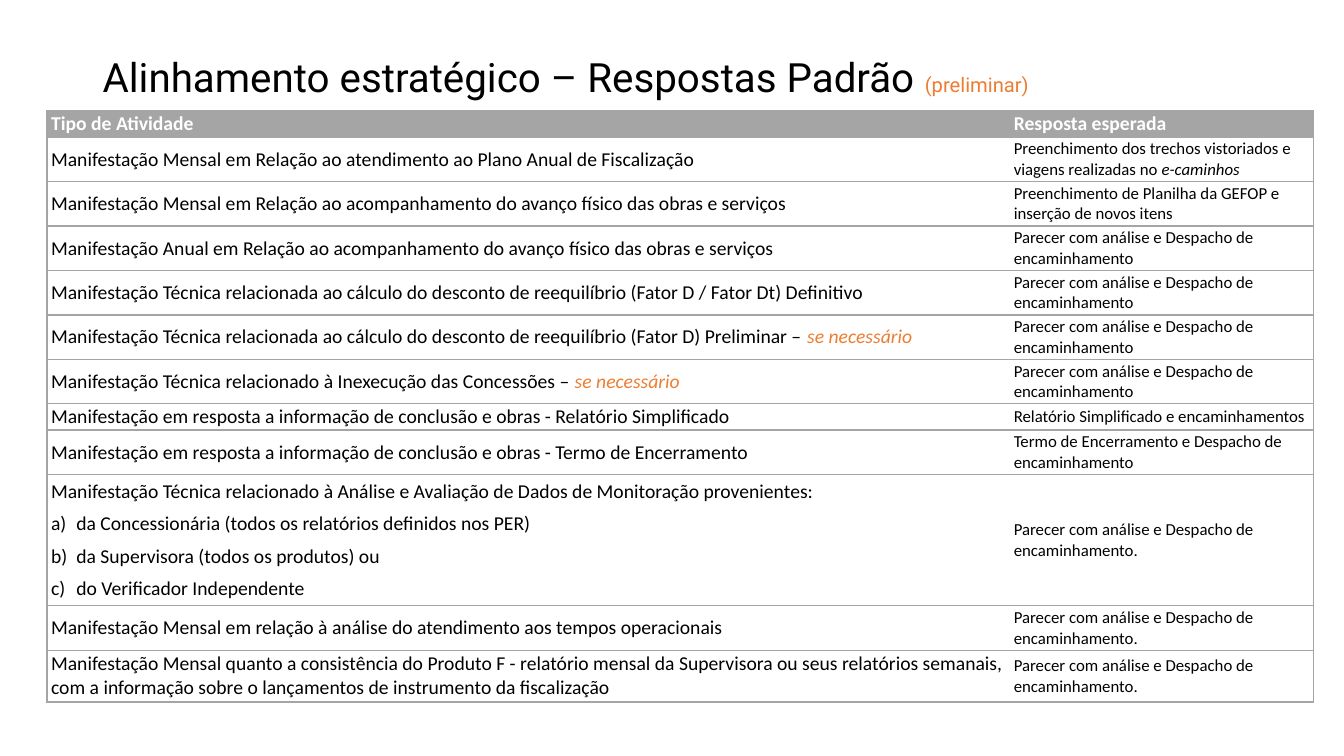
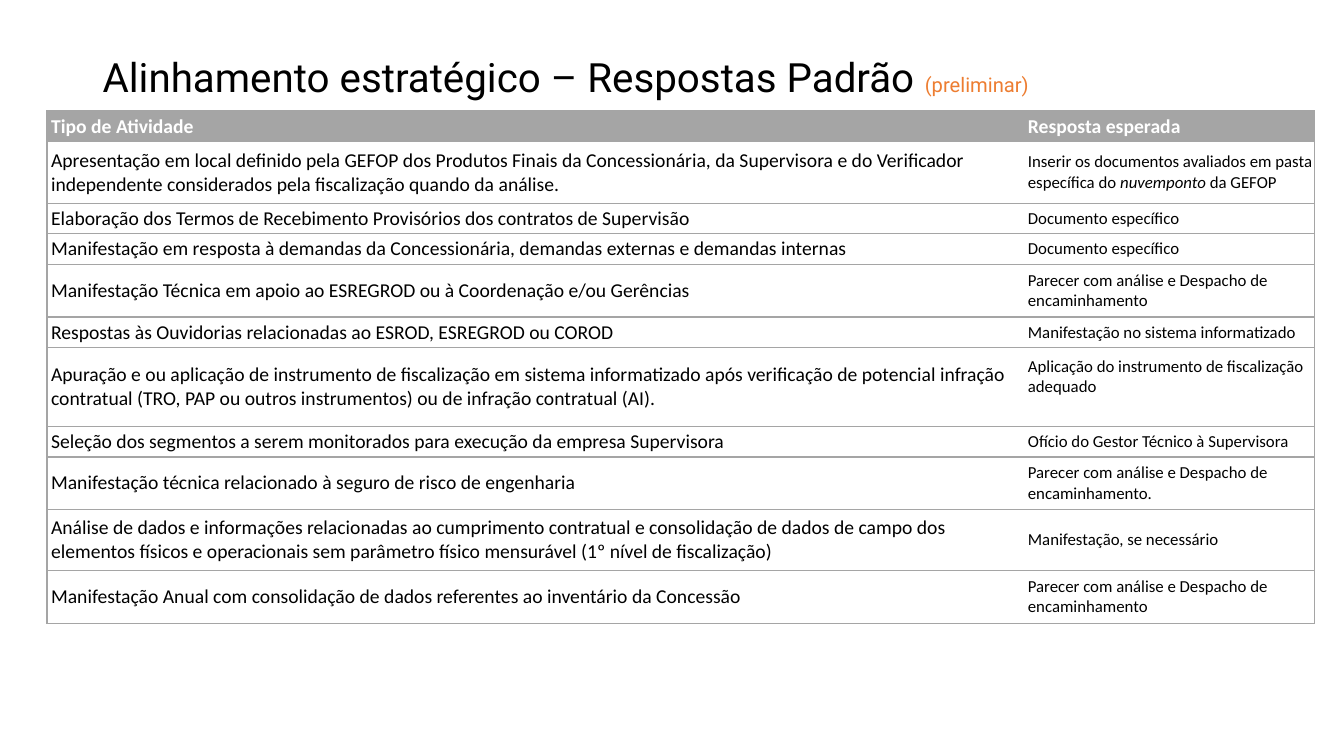
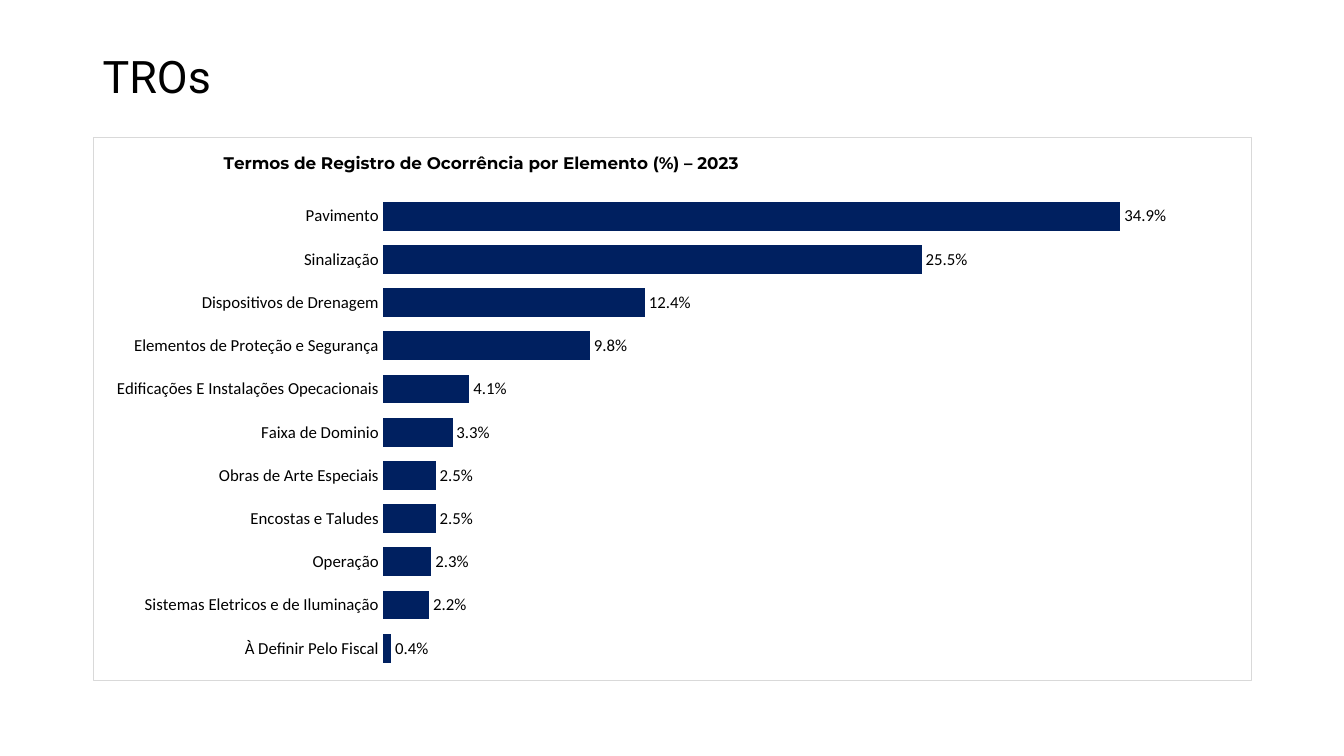
"""Build three slides: two tables of standard responses and one chart of occurrence records."""
from lxml.etree import SubElement
from pptx import Presentation
from pptx.chart.data import CategoryChartData
from pptx.dml.color import RGBColor
from pptx.enum.chart import XL_CHART_TYPE as ChartType
from pptx.enum.chart import XL_LABEL_POSITION as LabelPosition
from pptx.enum.chart import XL_TICK_MARK as TickMark
from pptx.enum.text import MSO_ANCHOR as Anchor
from pptx.oxml import parse_xml
from pptx.oxml.ns import nsdecls, qn
from pptx.util import Inches, Pt

COLORS = {
    name: RGBColor.from_string(value)
    for name, value in {
        "black": "000000",
        "white": "FFFFFF",
        "gray": "A5A5A5",
        "orange": "ED7D31",
        "navy": "002060",
        "frame": "D9D9D9",
    }.items()
}
TITLE_FONT, BODY_FONT = "Roboto", "Calibri"
NO_STYLE = "{2D5ABB26-0587-4C30-8999-92F81FD0307C}"
OPINION = "Parecer com análise e Despacho de encaminhamento"
HEADING = ("Tipo de Atividade", "Resposta esperada")

TABLES = [
    {
        "columns": (71.63, 22.58),
        "spacing": 6,
        "rows": [
            (3.47, *HEADING),
            (5.88, "Manifestação Mensal em Relação ao atendimento ao Plano Anual de Fiscalização",
             "Preenchimento dos trechos vistoriados e viagens realizadas no *e-caminhos*"),
            (5.88, "Manifestação Mensal em Relação ao acompanhamento do avanço físico das obras e serviços",
             "Preenchimento de Planilha da GEFOP e inserção de novos itens"),
            (5.88, "Manifestação Anual em Relação ao acompanhamento do avanço físico das obras e serviços",
             OPINION),
            (5.88, "Manifestação Técnica relacionada ao cálculo do desconto de reequilíbrio "
             "(Fator D / Fator Dt) Definitivo", OPINION),
            (5.88, "Manifestação Técnica relacionada ao cálculo do desconto de reequilíbrio "
             "(Fator D) Preliminar – *se necessário*", OPINION),
            (5.88, "Manifestação Técnica relacionado à Inexecução das Concessões – *se necessário*", OPINION),
            (3.47, "Manifestação em resposta a informação de conclusão e obras - Relatório Simplificado",
             "Relatório Simplificado e encaminhamentos"),
            (5.88, "Manifestação em resposta a informação de conclusão e obras - Termo de Encerramento",
             "Termo de Encerramento e Despacho de encaminhamento"),
            (17.38, "Manifestação Técnica relacionado à Análise e Avaliação de Dados de Monitoração provenientes:\n"
             "da Concessionária (todos os relatórios definidos nos PER)\n"
             "da Supervisora (todos os produtos) ou\n"
             "do Verificador Independente", OPINION + "."),
            (5.88, "Manifestação Mensal em relação à análise do atendimento aos tempos operacionais", OPINION + "."),
            (6.84, "Manifestação Mensal quanto a consistência do Produto F - relatório mensal da Supervisora "
             "ou seus relatórios semanais, com a informação sobre o lançamentos de instrumento da fiscalização",
             OPINION + "."),
        ],
    },
    {
        "columns": (72.68, 21.6),
        "spacing": 0,
        "rows": [
            (4.07, *HEADING),
            (8.13, "Apresentação em local definido pela GEFOP dos Produtos Finais da Concessionária, da Supervisora "
             "e do Verificador independente considerados pela fiscalização quando da análise.",
             "Inserir os documentos avaliados em pasta específica do *nuvemponto* da GEFOP"),
            (4.07, "Elaboração dos Termos de Recebimento Provisórios dos contratos de Supervisão",
             "Documento específico"),
            (4.07, "Manifestação em resposta à demandas da Concessionária, demandas externas e demandas internas",
             "Documento específico"),
            (6.92, "Manifestação Técnica em apoio ao ESREGROD ou à Coordenação e/ou Gerências", OPINION),
            (4.07, "Respostas às Ouvidorias relacionadas ao ESROD, ESREGROD ou COROD",
             "Manifestação no sistema informatizado"),
            (10.4, "Apuração e ou aplicação de instrumento de fiscalização em sistema informatizado após verificação "
             "de potencial infração contratual (TRO, PAP ou outros instrumentos) ou de infração contratual (AI).",
             "Aplicação do instrumento de fiscalização adequado"),
            (4.07, "Seleção dos segmentos a serem monitorados para execução da empresa Supervisora",
             "Ofício do Gestor Técnico à Supervisora"),
            (6.92, "Manifestação técnica relacionado à seguro de risco de engenharia", OPINION + "."),
            (8.13, "Análise de dados e informações relacionadas ao cumprimento contratual e consolidação de dados de "
             "campo dos elementos físicos e operacionais sem parâmetro físico mensurável (1º nível de fiscalização)",
             "Manifestação, se necessário"),
            (6.92, "Manifestação Anual com consolidação de dados referentes ao inventário da Concessão", OPINION),
        ],
    },
]

OCCURRENCES = {
    "À Definir Pelo Fiscal": 0.004,
    "Sistemas Eletricos e de Iluminação": 0.022,
    "Operação": 0.023,
    "Encostas e Taludes": 0.025,
    "Obras de Arte Especiais": 0.025,
    "Faixa de Dominio": 0.033,
    "Edificações E Instalações Opecacionais": 0.041,
    "Elementos de Proteção e Segurança": 0.098,
    "Dispositivos de Drenagem": 0.124,
    "Sinalização": 0.255,
    "Pavimento": 0.349,
}

deck = Presentation()
deck.slide_width, deck.slide_height = Inches(13.33), Inches(7.5)
COLUMN, ROW = deck.slide_width / 100, deck.slide_height / 100


def add_page(spans):
    """Add a blank page with a title made of (text, size, color) spans."""
    page = deck.slides.add_slide(deck.slide_layouts[6])
    box = page.shapes.add_textbox(*(int(n) for n in (6.9 * COLUMN, 5.33 * ROW, 86.25 * COLUMN, 10.27 * ROW)))
    box.text_frame.word_wrap = True
    box.text_frame.vertical_anchor = Anchor.MIDDLE
    para = box.text_frame.paragraphs[0]
    para.line_spacing = 0.9
    para.font.name = TITLE_FONT
    for text, size, color in spans:
        span = para.add_run()
        span.text = text
        span.font.size = Pt(size)
        span.font.color.rgb = COLORS[color]
    return page


def place_part(part, position, **shares):
    """Give a chart part a manual layout, in shares of the chart."""
    for old in part.findall(qn("c:layout")):
        part.remove(old)
    layout = parse_xml(f"<c:layout {nsdecls('c')}/>")
    manual = SubElement(layout, qn("c:manualLayout"))
    if "w" in shares:
        SubElement(manual, qn("c:layoutTarget"), val="inner")
    for axis in "xy":
        SubElement(manual, qn(f"c:{axis}Mode"), val="edge")
    for key, share in shares.items():
        SubElement(manual, qn(f"c:{key}"), val=str(share))
    part.insert(position, layout)


for content in TABLES:
    page = add_page([("Alinhamento estratégico – Respostas Padrão ", 28.8, "black"), ("(preliminar)", 14.4, "orange")])
    rows, widths = content["rows"], content["columns"]
    table = page.shapes.add_table(
        len(rows), 2, int(3.5 * COLUMN), int(14.67 * ROW),
        int(sum(widths) * COLUMN), int(sum(row[0] for row in rows) * ROW),
    ).table
    table.horz_banding = False
    table._tbl.tblPr.find(qn("a:tableStyleId")).text = NO_STYLE
    for column, width in zip(table.columns, widths):
        column.width = int(width * COLUMN)
    for row_index, (height, *texts) in enumerate(rows):
        table.rows[row_index].height = int(height * ROW)
        heading = row_index == 0
        for column_index, text in enumerate(texts):
            cell = table.cell(row_index, column_index)
            cell.margin_left = cell.margin_right = cell.margin_top = cell.margin_bottom = 0
            if text.startswith("Aplicação"):
                cell.margin_bottom = Inches(0.2)
            cell.vertical_anchor = Anchor.MIDDLE
            for side in ("LTB", "RTB")[column_index]:
                cell._tc.get_or_add_tcPr().append(parse_xml(
                    f'<a:ln{side} {nsdecls("a")} w="{Pt(1)}"><a:solidFill>'
                    f'<a:srgbClr val="{COLORS["gray"]}"/></a:solidFill></a:ln{side}>'
                ))
            cell.fill.solid()
            cell.fill.fore_color.rgb = COLORS["gray" if heading else "white"]
            for line_index, line in enumerate(text.split("\n")):
                frame = cell.text_frame
                para = frame.add_paragraph() if line_index else frame.paragraphs[0]
                para.space_before = Pt(content["spacing"] * column_index)
                para.space_after = Pt(content["spacing"])
                para.font.name = BODY_FONT
                para.font.size = Pt(12 if column_index and not heading else 14)
                para.font.bold = heading
                para.font.color.rgb = COLORS["white" if heading else "black"]
                properties = para._p.get_or_add_pPr()
                properties.set("marL", str(Inches(0.29 if line_index else 0.04)))
                if line_index:
                    properties.set("indent", str(Inches(-0.25)))
                    numbering = parse_xml(f'<a:buAutoNum {nsdecls("a")} type="alphaLcParenR"/>')
                    properties.find(qn("a:defRPr")).addprevious(numbering)
                for piece_index, piece in enumerate(line.split("*")):
                    if piece:
                        span = para.add_run()
                        span.text = piece
                        if piece_index % 2:
                            span.font.italic = True
                            if column_index == 0:
                                span.font.color.rgb = COLORS["orange"]

page = add_page([("TROs", 32, "black")])
chart_data = CategoryChartData(number_format="0.0%")
chart_data.categories = list(OCCURRENCES)
chart_data.add_series("Series 1", list(OCCURRENCES.values()))
chart = page.shapes.add_chart(
    ChartType.BAR_CLUSTERED, int(6.9 * COLUMN), int(18.13 * ROW), int(86.25 * COLUMN), int(72 * ROW), chart_data,
).chart
chart.has_legend = False
chart.font.name = BODY_FONT
chart.font.size = Pt(12)
chart.font.color.rgb = COLORS["black"]

chart.has_title = True
para = chart.chart_title.text_frame.paragraphs[0]
para.text = "Termos de Registro de Ocorrência por Elemento (%) – 2023"
para.font.name = "Montserrat"
para.font.size = Pt(12)
para.font.bold = True
para.font.color.rgb = COLORS["black"]

chart.category_axis.major_tick_mark = TickMark.NONE
chart.category_axis.format.line.fill.background()
chart.value_axis.has_major_gridlines = False
chart.value_axis.minimum_scale = 0
chart.value_axis.maximum_scale = 0.4
chart.value_axis.visible = False

plot = chart.plots[0]
plot.gap_width = 50
plot.vary_by_categories = False
bars = plot.series[0]
bars.format.fill.solid()
bars.format.fill.fore_color.rgb = COLORS["navy"]
labels = bars.data_labels
labels.show_value = True
labels.position = LabelPosition.OUTSIDE_END
labels.number_format = "0.0%"
labels.number_format_is_linked = False
labels.font.name = BODY_FONT
labels.font.size = Pt(12)
labels.font.color.rgb = COLORS["black"]

chart_part = chart.element.find(qn("c:chart"))
place_part(chart_part.find(qn("c:title")), 1, x=0.11, y=0.02)
place_part(chart_part.find(qn("c:plotArea")), 0, x=0.25, y=0.105, w=0.73, h=0.875)
chart_part.addnext(parse_xml(
    f'<c:spPr {nsdecls("c", "a")}><a:noFill/><a:ln w="{Pt(0.75)}"><a:solidFill>'
    f'<a:srgbClr val="{COLORS["frame"]}"/></a:solidFill></a:ln></c:spPr>'
))

deck.save("out.pptx")
